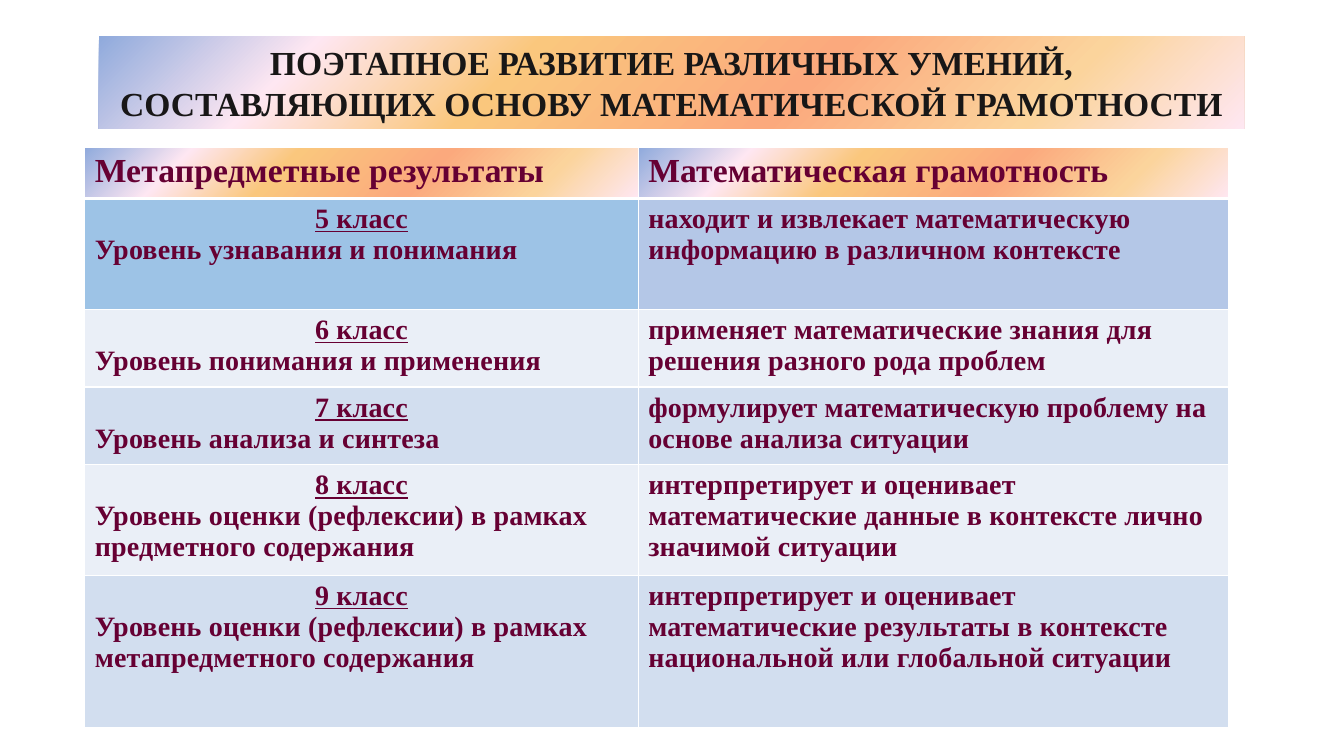
from dataclasses import dataclass

from lxml import etree
from pptx import Presentation
from pptx.dml.color import RGBColor
from pptx.enum import shapes, text
from pptx.oxml import ns
from pptx.util import Inches, Pt


@dataclass(frozen=True)
class Theme:
    font: str = "Times New Roman"
    head: int = 24
    body: int = 20
    ink: str = "181717"
    wine: str = "660033"
    line: str = "FFFFFF"
    light: str = "EAEFF7"
    mid: str = "D2DEEF"
    sky: str = "9DC3E6"
    blue: str = "B4C7E7"
    blend: tuple = ((0, "8FAADC"), (18, "FEE7F2"), (36, "FAC77D"),
                    (61, "FBA97D"), (82, "FBD49C"), (100, "FEE7F2"))


THEME = Theme()
TITLE = ("ПОЭТАПНОЕ РАЗВИТИЕ РАЗЛИЧНЫХ УМЕНИЙ, "
         "СОСТАВЛЯЮЩИХ ОСНОВУ МАТЕМАТИЧЕСКОЙ ГРАМОТНОСТИ")
HEADS = ("Метапредметные результаты", "Математическая грамотность")
# grade, level, skill, row height, left fill, right fill
GRADES = (
    (5, "Уровень узнавания и понимания",
     "находит и извлекает математическую\nинформацию в различном контексте",
     1.1, THEME.sky, THEME.blue),
    (6, "Уровень понимания и применения",
     "применяет математические знания для решения разного рода проблем",
     0.77, THEME.light, THEME.light),
    (7, "Уровень анализа и синтеза",
     "формулирует математическую проблему на основе анализа ситуации",
     0.77, THEME.mid, THEME.mid),
    (8, "Уровень оценки (рефлексии) в рамках предметного содержания",
     "интерпретирует и оценивает математические данные в контексте "
     "лично значимой ситуации",
     1.1, THEME.light, THEME.light),
    (9, "Уровень оценки (рефлексии) в рамках метапредметного содержания",
     "интерпретирует и оценивает математические результаты в контексте "
     "национальной или глобальной ситуации",
     1.51, THEME.mid, THEME.mid),
)


def paint(fill, color):
    fill.solid()
    fill.fore_color.rgb = RGBColor.from_string(color)


def blend(fill, node):
    """Give the fill, which lives inside node, the theme's diagonal gradient."""
    fill.gradient()
    fill.gradient_angle = 315
    stops = node.find(".//" + ns.qn("a:gsLst"))
    for stop in list(stops):
        stops.remove(stop)
    for place, color in THEME.blend:
        stop = etree.SubElement(stops, ns.qn("a:gs"), pos=str(place * 1000))
        etree.SubElement(stop, ns.qn("a:srgbClr"), val=color)


def style(frame, size, color, gap=None):
    """Format every run; gap is the letter spacing in 1/100 pt."""
    for para in frame.paragraphs:
        for run in para.runs:
            font = run.font
            font.name, font.size, font.bold = THEME.font, Pt(size), True
            font.color.rgb = RGBColor.from_string(color)
            if gap:
                run._r.get_or_add_rPr().set("spc", str(gap))


def edge(cell, base=1):
    """Draw white borders, with the bottom one base points wide."""
    props = cell._tc.get_or_add_tcPr()
    for spot, side in enumerate("LRTB"):
        width = Pt(base if side == "B" else 1)
        line = etree.Element(ns.qn("a:ln" + side), w=str(width))
        solid = etree.SubElement(line, ns.qn("a:solidFill"))
        etree.SubElement(solid, ns.qn("a:srgbClr"), val=THEME.line)
        props.insert(spot, line)


def add_title(slide):
    box = slide.shapes.add_shape(shapes.MSO_SHAPE.RECTANGLE, Inches(0.98),
                                 Inches(0.36), Inches(11.36), Inches(0.92))
    box.shadow.inherit = False
    box.line.fill.background()
    blend(box.fill, box._element.spPr)
    frame = box.text_frame
    frame.word_wrap = True
    frame.margin_left = frame.margin_right = Inches(0.11)
    frame.margin_top = frame.margin_bottom = Inches(0.06)
    frame.text = TITLE
    frame.paragraphs[0].alignment = text.PP_ALIGN.CENTER
    style(frame, THEME.head, THEME.ink)


def fill_head(cell, label):
    cell.text_frame.text = label
    style(cell.text_frame, THEME.head, THEME.wine, 10)
    blend(cell.fill, cell._tc)
    edge(cell, 3)


def fill_cell(cell, words, color):
    cell.text_frame.text = words
    style(cell.text_frame, THEME.body, THEME.wine, 10)
    paint(cell.fill, color)
    edge(cell)


def add_grid(slide):
    tall = [0.51] + [grade[3] for grade in GRADES]
    grid = slide.shapes.add_table(len(tall), 2, Inches(0.84), Inches(1.46),
                                  Inches(11.35), Inches(sum(tall))).table
    for col, wide in zip(grid.columns, (5.49, 5.86)):
        col.width = Inches(wide)
    for row, high in zip(grid.rows, tall):
        row.height = Inches(high)
    for col, label in enumerate(HEADS):
        fill_head(grid.cell(0, col), label)
    for row, (grade, level, skill, _, left, right) in enumerate(GRADES, 1):
        cell = grid.cell(row, 0)
        fill_cell(cell, f"{grade} класс\n{level}", left)
        top = cell.text_frame.paragraphs[0]
        top.alignment = text.PP_ALIGN.CENTER
        top.runs[0].font.underline = True
        fill_cell(grid.cell(row, 1), skill, right)


def main():
    deck = Presentation()
    deck.slide_width, deck.slide_height = Inches(13.33), Inches(7.5)
    slide = deck.slides.add_slide(deck.slide_layouts[6])
    add_title(slide)
    add_grid(slide)
    deck.save("out.pptx")


if __name__ == "__main__":
    main()
